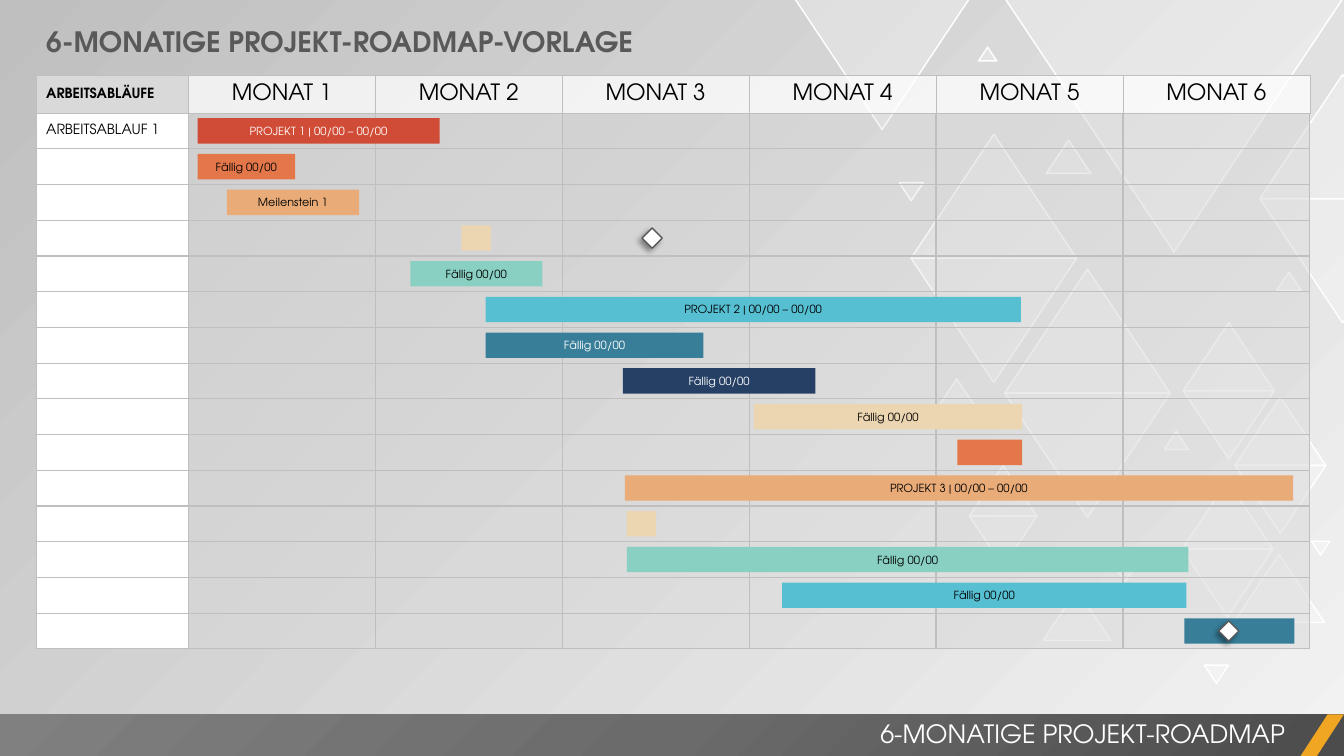
from dataclasses import dataclass

from lxml import etree
from pptx import Presentation
from pptx import util as u
from pptx.dml.color import RGBColor
from pptx.enum import shapes, text
from pptx.oxml import parse_xml
from pptx.oxml.ns import nsdecls, qn


@dataclass(frozen=True)
class Theme:
    font: str = "TeX Gyre Adventor"
    title_size: int = 20
    footer_size: int = 18
    month_size: int = 16
    workflow_size: int = 10
    bar_size: int = 8
    white: str = "FFFFFF"
    black: str = "000000"
    title: str = "595959"
    grid: str = "BFBFBF"
    cell: str = "D9D9D9"
    backdrop_light: str = "F2F2F2"
    footer_dark: str = "4C4C4C"
    footer_mid: str = "6B6B6B"
    footer_light: str = "808080"
    accent: str = "F0A622"
    red: str = "D14C36"
    orange: str = "E4774A"
    apricot: str = "E9AB77"
    sand: str = "ECD6B2"
    mint: str = "89D0C2"
    cyan: str = "56BFD2"
    teal: str = "387E99"
    navy: str = "264065"


THEME = Theme()
PAGE_WIDTH, PAGE_HEIGHT = 33.87, 19.05

# Table geometry in centimetres
TABLE_LEFT, TABLE_TOP = 0.91, 1.9
NAME_WIDTH, MONTH_WIDTH = 3.84, 4.71
HEADER_HEIGHT, ROW_HEIGHT = 0.95, 0.9
MONTHS, WORKFLOWS = 6, 15
BAR_HEIGHT, MILESTONE_SIZE = 0.64, 0.51
MONTH_OPACITY = (50, 50, 25, 25, 50, 50)

# Triangles: left, top, width
MIRRORED = [(22.96, 3.38, 4.17), (25.32, 6.78, 4.17), (29.79, 12.12, 2.29),
            (29.82, 8.13, 2.29), (31.12, 10.01, 2.29), (24.43, 11.73, 1.7),
            (31.75, 1.88, 4.17)]
UPRIGHT = [(31.09, 13.97, 2.29), (26.29, 14.86, 1.7), (23.55, 9.55, 1.12),
           (29.34, 10.87, 0.61), (32.18, 6.86, 0.61), (24.66, 1.19, 0.46),
           (26.37, 3.53, 1.12)]
INVERTED = [(25.32, -0.05, 8.53), (27.79, 13.82, 1.12), (30.35, 16.76, 0.61),
            (22.66, 4.6, 0.61), (33.05, 13.64, 0.46), (20.02, -0.05, 4.42)]

# One bar per workflow row: left, width, fill, label, label colour
DUE = "Fällig 00/00"
BARS = [
    (4.98, 6.1, THEME.red, "PROJEKT 1 | 00/00 – 00/00", THEME.white),
    (4.98, 2.46, THEME.orange, DUE, THEME.black),
    (5.72, 3.33, THEME.apricot, "Meilenstein 1", THEME.black),
    (11.63, 0.74, THEME.sand, "", THEME.black),
    (10.34, 3.33, THEME.mint, DUE, THEME.black),
    (12.24, 13.49, THEME.cyan, "PROJEKT 2 | 00/00 – 00/00", THEME.black),
    (12.24, 5.49, THEME.teal, DUE, THEME.white),
    (15.7, 4.85, THEME.navy, DUE, THEME.white),
    (19, 6.76, THEME.sand, DUE, THEME.black),
    (24.13, 1.63, THEME.orange, "", THEME.black),
    (15.75, 16.84, THEME.apricot, "PROJEKT 3 | 00/00 – 00/00", THEME.black),
    (15.8, 0.74, THEME.sand, "", THEME.black),
    (15.8, 14.15, THEME.mint, DUE, THEME.black),
    (19.71, 10.19, THEME.cyan, DUE, THEME.black),
    (29.85, 2.77, THEME.teal, "", THEME.black),
]
MILESTONES = [(3, 16.18), (14, 30.71)]  # workflow row, left


def rgb(colour):
    return RGBColor.from_string(colour)


def set_opacity(element, percent):
    """Make the first colour in the element see-through."""
    colour = element.find(".//" + qn("a:srgbClr"))
    etree.SubElement(colour, qn("a:alpha")).set("val", str(percent * 1000))


def set_gradient(fill, element, stops, shade):
    """Fill with stops of (position, colour); shade is the direction XML."""
    fill.solid()
    marks = "".join(f'<a:gs pos="{position * 1000}"><a:srgbClr val="{colour}"/></a:gs>'
                    for position, colour in stops)
    old = element.find(".//" + qn("a:solidFill"))
    old.getparent().replace(old, parse_xml(
        f'<a:gradFill {nsdecls("a")} rotWithShape="1"><a:gsLst>{marks}</a:gsLst>{shade}</a:gradFill>'))


def write(frame, wording, size, colour, align=text.PP_ALIGN.LEFT, bold=False):
    para = frame.paragraphs[0]
    para.text = wording
    para.alignment = align
    para.font.name = THEME.font
    para.font.size = u.Pt(size)
    para.font.bold = bold
    para.font.color.rgb = rgb(colour)


def add_shape(parent, kind, left, top, width, height, fill, line=None):
    shape = parent.shapes.add_shape(kind, u.Cm(left), u.Cm(top), u.Cm(width), u.Cm(height))
    shape.shadow.inherit = False
    shape.fill.solid()
    shape.fill.fore_color.rgb = rgb(fill)
    if line:
        shape.line.color.rgb = rgb(line)
        shape.line.width = u.Pt(1)
    else:
        shape.line.fill.background()
    return shape


def add_triangle(group, left, top, width, rotation=0):
    triangle = add_shape(group, shapes.MSO_SHAPE.ISOSCELES_TRIANGLE, left, top,
                         width, 0.75 * width, THEME.white, THEME.white)
    triangle.rotation = rotation
    set_opacity(triangle.element, 30)


def add_backdrop(page):
    set_gradient(page.background.fill, page.element,
                 [(0, THEME.backdrop_light), (100, THEME.grid)],
                 '<a:lin ang="13500000" scaled="0"/>')
    set_opacity(page.element, 40)
    group = page.shapes.add_group_shape()
    for left, top, width in MIRRORED:
        add_triangle(group, left, top, width)
        add_triangle(group, left, top + 0.75 * width, width, 180)
    for triangle in UPRIGHT:
        add_triangle(group, *triangle)
    for triangle in INVERTED:
        add_triangle(group, *triangle, 180)


def add_footer(page):
    top, height = 18, 1.06
    band = add_shape(page, shapes.MSO_SHAPE.RECTANGLE, 0, top, PAGE_WIDTH, height, THEME.footer_mid)
    set_gradient(band.fill, band.element,
                 [(0, THEME.footer_dark), (50, THEME.footer_mid), (100, THEME.footer_light)],
                 '<a:path path="circle"><a:fillToRect l="100000" t="100000"/></a:path>')
    slash = add_shape(page, shapes.MSO_SHAPE.PARALLELOGRAM, 32.77, top, 1.1, height, THEME.accent)
    slash.adjustments[0] = 0.65
    box = page.shapes.add_textbox(u.Cm(13.34), u.Cm(17.98), u.Cm(19.3), u.Cm(1.02))
    box.text_frame.word_wrap = True
    write(box.text_frame, "6-MONATIGE PROJEKT-ROADMAP", THEME.footer_size, THEME.white,
          text.PP_ALIGN.RIGHT)


def add_title(page):
    title = page.shapes.title
    title.left, title.top, title.width, title.height = map(u.Cm, (0.91, 0.48, 20.29, 1.12))
    title.text_frame.vertical_anchor = text.MSO_ANCHOR.MIDDLE
    write(title.text_frame, "6-MONATIGE PROJEKT-ROADMAP-VORLAGE", THEME.title_size,
          THEME.title, bold=True)


def format_cell(cell, wording, fill, opacity, size, header=False, **style):
    cell.vertical_anchor = text.MSO_ANCHOR.MIDDLE
    cell.margin_top = cell.margin_bottom = 0
    write(cell.text_frame, wording, size, THEME.black, **style)
    cell.fill.solid()
    cell.fill.fore_color.rgb = rgb(fill)
    properties = cell._tc.get_or_add_tcPr()
    if opacity < 100:
        set_opacity(properties, opacity)
    for index, side in enumerate(("lnL", "lnR", "lnT", "lnB")):
        width = u.Pt(0.5 if header and side != "lnB" else 1)
        properties.insert(index, parse_xml(
            f'<a:{side} {nsdecls("a")} w="{width}"><a:solidFill>'
            f'<a:srgbClr val="{THEME.grid}"/></a:solidFill></a:{side}>'))


def add_roadmap_table(page):
    frame = page.shapes.add_table(
        WORKFLOWS + 1, MONTHS + 1, u.Cm(TABLE_LEFT), u.Cm(TABLE_TOP),
        u.Cm(NAME_WIDTH + MONTHS * MONTH_WIDTH), u.Cm(HEADER_HEIGHT + WORKFLOWS * ROW_HEIGHT))
    table = frame.table
    table.first_row = table.horz_banding = False
    for index, column in enumerate(table.columns):
        column.width = u.Cm(MONTH_WIDTH if index else NAME_WIDTH)
    for index, row in enumerate(table.rows):
        row.height = u.Cm(ROW_HEIGHT if index else HEADER_HEIGHT)

    format_cell(table.cell(0, 0), "ARBEITSABLÄUFE", THEME.cell, 100, THEME.workflow_size,
                header=True, bold=True)
    for month, opacity in enumerate(MONTH_OPACITY, 1):
        format_cell(table.cell(0, month), f"MONAT {month}", THEME.white, 75, THEME.month_size,
                    header=True, align=text.PP_ALIGN.CENTER)
        for row in range(1, WORKFLOWS + 1):
            format_cell(table.cell(row, month), "", THEME.cell, opacity, THEME.workflow_size)
    for row in range(1, WORKFLOWS + 1):
        name = "ARBEITSABLAUF 1" if row == 1 else ""
        format_cell(table.cell(row, 0), name, THEME.white, 100, THEME.workflow_size)


def centred_top(row, height):
    """Top of an item of this height, centred in a workflow row."""
    return TABLE_TOP + HEADER_HEIGHT + row * ROW_HEIGHT + (ROW_HEIGHT - height) / 2


def add_bar(page, row, left, width, fill, label, colour):
    bar = add_shape(page, shapes.MSO_SHAPE.RECTANGLE, left, centred_top(row, BAR_HEIGHT),
                    width, BAR_HEIGHT, fill)
    if label:
        bar.text_frame.vertical_anchor = text.MSO_ANCHOR.MIDDLE
        write(bar.text_frame, label, THEME.bar_size, colour, text.PP_ALIGN.CENTER)


def add_milestone(page, row, left):
    diamond = add_shape(page, shapes.MSO_SHAPE.DIAMOND, left, centred_top(row, MILESTONE_SIZE),
                        MILESTONE_SIZE, MILESTONE_SIZE, THEME.white, THEME.title)
    diamond.element.find(".//" + qn("a:effectLst")).append(parse_xml(
        f'<a:outerShdw {nsdecls("a")} blurRad="{u.Pt(4)}" dist="{u.Pt(3)}" dir="8100000">'
        f'<a:srgbClr val="{THEME.black}"><a:alpha val="40000"/></a:srgbClr></a:outerShdw>'))


def main():
    deck = Presentation()
    deck.slide_width, deck.slide_height = u.Cm(PAGE_WIDTH), u.Cm(PAGE_HEIGHT)
    page = deck.slides.add_slide(deck.slide_layouts.get_by_name("Title Only"))
    add_backdrop(page)
    add_footer(page)
    add_title(page)
    add_roadmap_table(page)
    for row, bar in enumerate(BARS):
        add_bar(page, row, *bar)
    for row, left in MILESTONES:
        add_milestone(page, row, left)
    deck.save("out.pptx")


if __name__ == "__main__":
    main()
